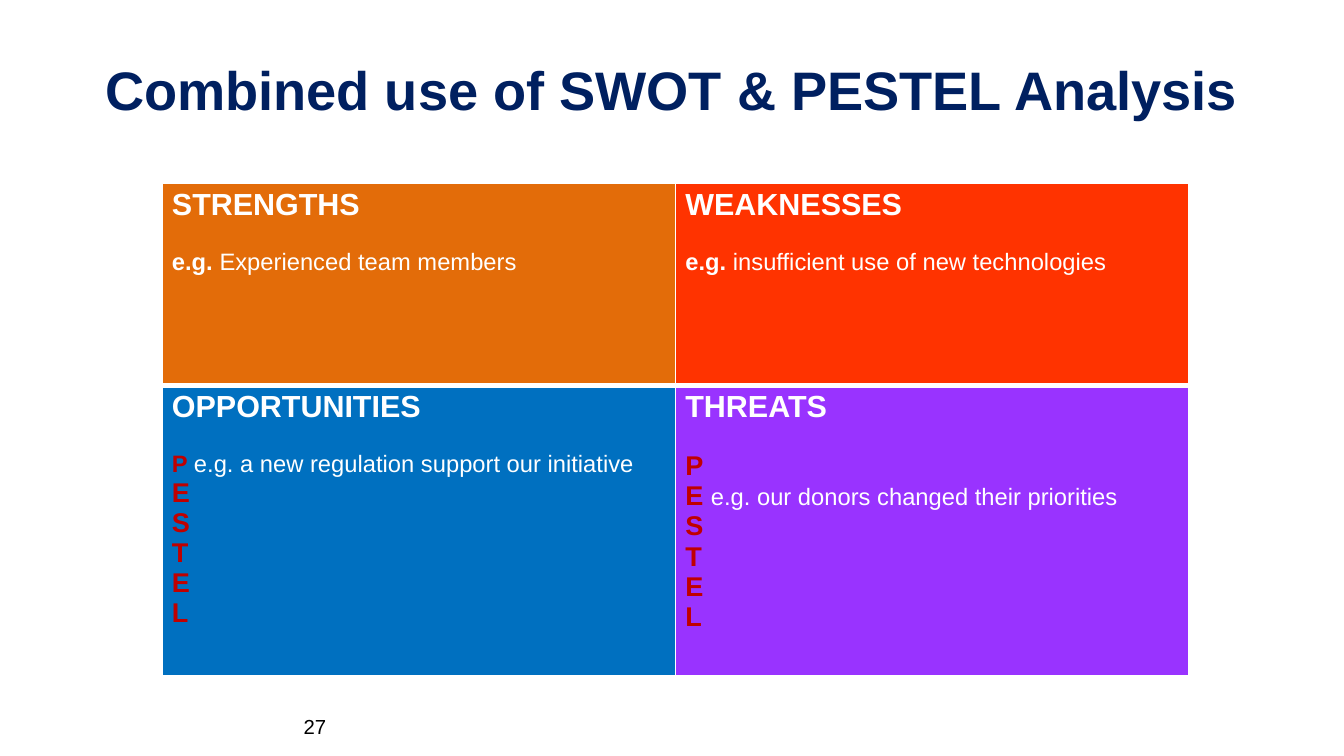
from dataclasses import dataclass

from lxml.etree import SubElement
from pptx import Presentation
from pptx.dml.color import RGBColor
from pptx.enum.text import MSO_ANCHOR, PP_ALIGN
from pptx.oxml.ns import qn
from pptx.slide import Slide
from pptx.table import _Cell
from pptx.text.text import _Paragraph
from pptx.util import Inches, Pt

WHITE, NAVY, RED, BLACK = "FFFFFF", "002060", "C00000", "000000"


@dataclass
class Span:
    text: str
    size: int
    color: str = WHITE
    bold: bool = True


@dataclass
class Quadrant:
    heading: str
    fill: str
    lines: list[list[Span]]


def rgb(value: str) -> RGBColor:
    return RGBColor.from_string(value)


def example_line(text: str) -> list[list[Span]]:
    return [[Span("e.g. ", 14), Span(text, 14, bold=False)]]


def pestel_lines(factor: str, factor_size: int, example: str) -> list[list[Span]]:
    """One line per PESTEL letter; the example follows the first matching one."""
    lines = [[Span(letter, 16, RED)] for letter in "PESTEL"]
    lines["PESTEL".index(factor)] = [
        Span(f"{factor} ", factor_size, RED), Span(example, 14, bold=False)]
    return lines


def write_spans(paragraph: _Paragraph, spans: list[Span]) -> None:
    for span in spans:
        run = paragraph.add_run()
        run.text = span.text
        run.font.name = "Arial"
        run.font.size = Pt(span.size)
        run.font.bold = span.bold
        run.font.color.rgb = rgb(span.color)


def add_label(slide: Slide, box: tuple[float, float, float, float],
              span: Span) -> _Paragraph:
    frame = slide.shapes.add_textbox(*map(Inches, box)).text_frame
    frame.word_wrap = True
    frame.vertical_anchor = MSO_ANCHOR.MIDDLE
    frame.margin_left = frame.margin_right = 0
    frame.margin_top = frame.margin_bottom = 0
    write_spans(frame.paragraphs[0], [span])
    return frame.paragraphs[0]


def set_borders(cell: _Cell, widths: dict[str, int]) -> None:
    properties = cell._tc.get_or_add_tcPr()
    for position, (side, width) in enumerate(widths.items()):
        line = SubElement(properties, qn(f"a:ln{side}"), w=str(Pt(width)))
        fill = SubElement(line, qn("a:solidFill"))
        SubElement(fill, qn("a:srgbClr"), val=WHITE)
        properties.insert(position, line)


def fill_cell(cell: _Cell, quadrant: Quadrant) -> None:
    cell.fill.solid()
    cell.fill.fore_color.rgb = rgb(quadrant.fill)
    cell.margin_left = cell.margin_right = Inches(0.08)
    cell.margin_top = cell.margin_bottom = Inches(0.04)
    heading = cell.text_frame.paragraphs[0]
    write_spans(heading, [Span(quadrant.heading, 18)])
    heading.space_after = Pt(16)
    for spans in quadrant.lines:
        write_spans(cell.text_frame.add_paragraph(), spans)


QUADRANTS = [
    [Quadrant("STRENGTHS", "E36C09", example_line("Experienced team members")),
     Quadrant("WEAKNESSES", "FF3300",
              example_line("insufficient use of new technologies"))],
    [Quadrant("OPPORTUNITIES", "0070C0",
              pestel_lines("P", 14, "e.g. a new regulation support our initiative")),
     Quadrant("THREATS", "9933FF",
              pestel_lines("E", 16, "e.g. our donors changed their priorities"))],
]
COLUMN_WIDTH = 4.21
ROW_HEIGHTS = [1.66, 2.38]


def main() -> None:
    presentation = Presentation()
    presentation.slide_width = Inches(11.02)
    presentation.slide_height = Inches(6.2)
    slide = presentation.slides.add_slide(presentation.slide_layouts[6])

    # Slide number and title
    add_label(slide, (2.49, 5.86, 0.3, 0.2), Span("27", 12, BLACK, False))
    title = add_label(slide, (0.55, 0.45, 9.92, 0.62),
                      Span("Combined use of SWOT & PESTEL Analysis", 32, NAVY))
    title.alignment = PP_ALIGN.CENTER
    title.line_spacing = 0.9

    # SWOT grid
    swot = slide.shapes.add_table(
        2, 2, Inches(1.33), Inches(1.5),
        Inches(2 * COLUMN_WIDTH), Inches(sum(ROW_HEIGHTS))).table
    for column in swot.columns:
        column.width = Inches(COLUMN_WIDTH)
    for row_index, (height, quadrants) in enumerate(zip(ROW_HEIGHTS, QUADRANTS)):
        swot.rows[row_index].height = Inches(height)
        top, bottom = (1, 3) if row_index == 0 else (3, 1)
        for column_index, quadrant in enumerate(quadrants):
            cell = swot.cell(row_index, column_index)
            fill_cell(cell, quadrant)
            set_borders(cell, {"L": 1, "R": 1, "T": top, "B": bottom})

    presentation.save("out.pptx")


if __name__ == "__main__":
    main()
